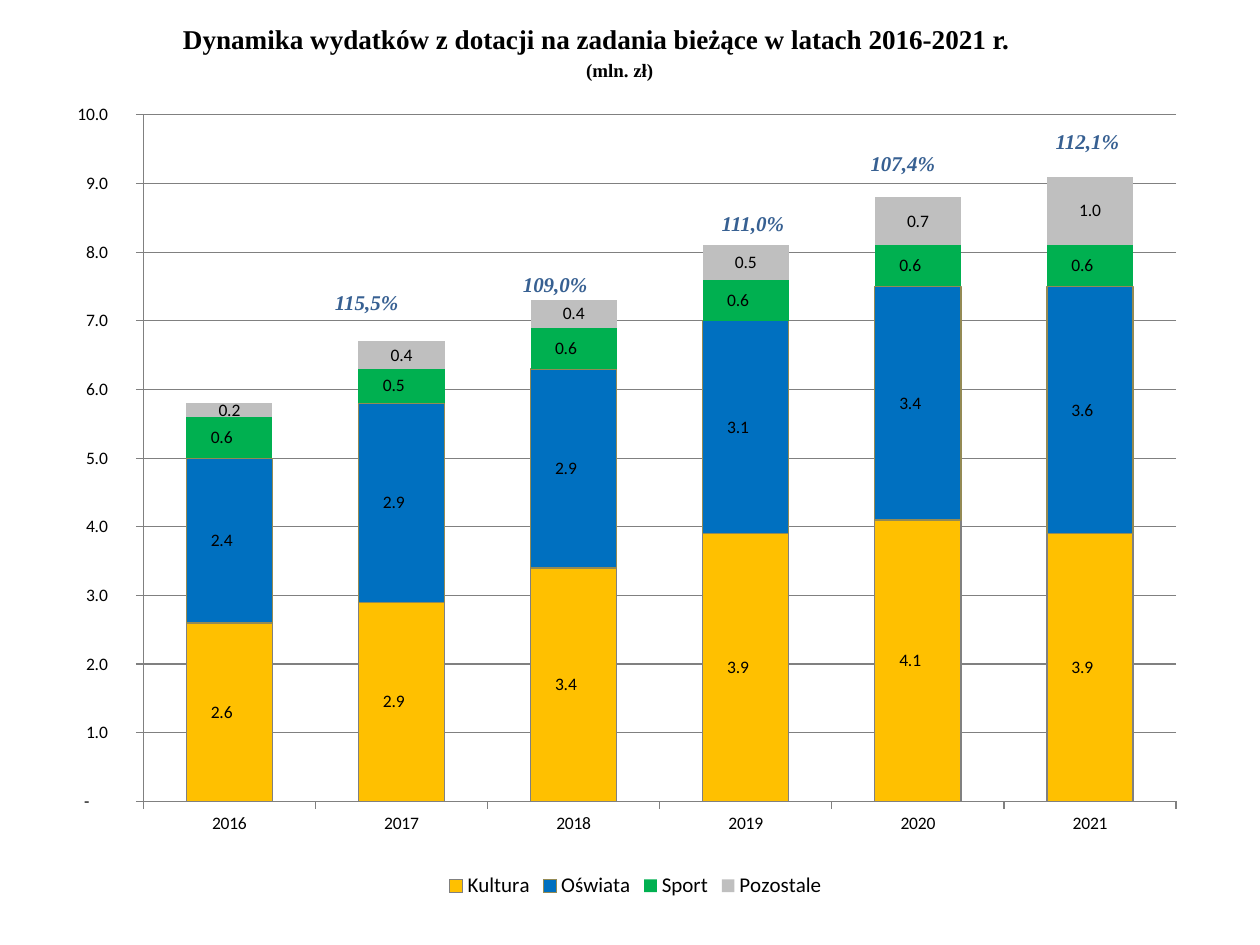
from pptx import Presentation
from pptx.chart.data import CategoryChartData
from pptx.dml.color import RGBColor
from pptx.enum.chart import XL_CHART_TYPE as ChartType, XL_LEGEND_POSITION as LegendPos
from pptx.enum.chart import XL_TICK_MARK as Tick
from pptx.enum.text import PP_ALIGN as Align
from pptx.oxml import parse_xml
from pptx.oxml.ns import nsdecls, qn
from pptx.util import Cm, Pt

BLACK = RGBColor(0x00, 0x00, 0x00)
GREY = RGBColor(0x80, 0x80, 0x80)
GOLD = RGBColor(0xFF, 0xC0, 0x00)
BLUE = RGBColor(0x00, 0x70, 0xC0)
GREEN = RGBColor(0x00, 0xB0, 0x50)
SILVER = RGBColor(0xBF, 0xBF, 0xBF)
KHAKI = RGBColor(0x94, 0x8A, 0x54)
NAVY = RGBColor(0x37, 0x60, 0x92)
SERIF, SANS = "Times New Roman", "Calibri"

ACCOUNTING = r'_-* #\ ##0.0\ _z_ł_-;\-* #\ ##0.0\ _z_ł_-;_-* "-"??\ _z_ł_-;_-@_-'
YEARS = ["2016", "2017", "2018", "2019", "2020", "2021"]
SERIES = [
    ("Kultura", (2.6, 2.9, 3.4, 3.9, 4.1, 3.9), GOLD, GREY, ACCOUNTING),
    ("Oświata", (2.4, 2.9, 2.9, 3.1, 3.4, 3.6), BLUE, KHAKI, ACCOUNTING),
    ("Sport", (0.6, 0.5, 0.6, 0.6, 0.6, 0.6), GREEN, None, ACCOUNTING),
    ("Pozostale", (0.2, 0.4, 0.4, 0.5, 0.7, 1.0), SILVER, None, "0.0"),
]
GROWTH = [
    ("115,5%", 5.79, 4.6),
    ("109,0%", 9.58, 4.22),
    ("111,0%", 13.59, 3.0),
    ("107,4%", 16.59, 1.8),
    ("112,1%", 20.32, 1.35),
]


def style_font(font, size, color=BLACK, name=SANS, bold=False, italic=False):
    """Set the look of a font."""
    font.size, font.name, font.bold, font.italic = Pt(size), name, bold, italic
    font.color.rgb = color


def add_title(s, x, y, w, h):
    """Add the heading and its unit line, the latter set a little to the right."""
    tf = s.shapes.add_textbox(Cm(x), Cm(y), Cm(w), Cm(h)).text_frame
    tf.word_wrap = True
    tf.text = "Dynamika wydatków z dotacji na zadania bieżące w latach 2016-2021 r.\n(mln. zł)"
    for p, size in zip(tf.paragraphs, (15.5, 10.8)):
        p.alignment = Align.CENTER
        style_font(p.runs[0].font, size, name=SERIF, bold=True)
    unit = tf.paragraphs[1]
    unit.space_before = Pt(2)
    unit._p.get_or_add_pPr().set("marL", str(Cm(0.96)))


def set_plot_layout(chart, x, y, w, h):
    """Fix the inner plot area as fractions of the chart."""
    plot_area = chart._chartSpace.chart.plotArea
    for old in plot_area.findall(qn("c:layout")):
        plot_area.remove(old)
    values = "".join(f'<c:{k} val="{v}"/>' for k, v in zip("xywh", (x, y, w, h)))
    plot_area.insert(0, parse_xml(
        f'<c:layout {nsdecls("c")}><c:manualLayout><c:layoutTarget val="inner"/>'
        f'<c:xMode val="edge"/><c:yMode val="edge"/>{values}</c:manualLayout></c:layout>'))


def style_axes(chart):
    """Format both axes and the gridlines."""
    for axis in (chart.category_axis, chart.value_axis):
        axis.major_tick_mark, axis.minor_tick_mark = Tick.OUTSIDE, Tick.NONE
        style_font(axis.tick_labels.font, 10)
        axis.format.line.color.rgb = GREY
        axis.format.line.width = Pt(0.75)
    axis = chart.value_axis
    axis.minimum_scale, axis.maximum_scale, axis.major_unit = 0, 10, 1
    axis.tick_labels.number_format = ACCOUNTING
    axis.tick_labels.number_format_is_linked = False
    axis.has_major_gridlines = True
    axis.major_gridlines.format.line.color.rgb = GREY
    axis.major_gridlines.format.line.width = Pt(0.75)


def style_series(ser, fill, line, number_format):
    """Colour a series and label its values."""
    ser.format.fill.solid()
    ser.format.fill.fore_color.rgb = fill
    if line is None:
        ser.format.line.fill.background()
    else:
        ser.format.line.color.rgb = line
        ser.format.line.width = Pt(0.75)
    labels = ser.data_labels
    labels.show_value = True
    labels.number_format = number_format
    labels.number_format_is_linked = False
    style_font(labels.font, 10)


def add_spending_chart(s, x, y, w, h):
    """Add the stacked columns with growth rates above them."""
    data = CategoryChartData(number_format="0.0")
    data.categories = YEARS
    for name, values, *_ in SERIES:
        data.add_series(name, values)
    chart = s.shapes.add_chart(
        ChartType.COLUMN_STACKED, Cm(x), Cm(y), Cm(w), Cm(h), data).chart
    chart.has_title = False
    style_font(chart.font, 18)
    set_plot_layout(chart, 0.09, 0.07, 0.86, 0.81)
    style_axes(chart)
    plot = chart.plots[0]
    plot.gap_width, plot.overlap, plot.vary_by_categories = 100, 100, False
    for ser, (_, _, fill, line, number_format) in zip(plot.series, SERIES):
        style_series(ser, fill, line, number_format)
    chart.has_legend = True
    chart.legend.position = LegendPos.BOTTOM
    chart.legend.include_in_layout = False
    style_font(chart.legend.font, 12)
    for text, dx, dy in GROWTH:
        tf = s.shapes.add_textbox(Cm(x + dx), Cm(y + dy), Cm(2), Cm(0.76)).text_frame
        tf.word_wrap = True
        tf.text = text
        style_font(tf.paragraphs[0].runs[0].font, 12, NAVY, SERIF, True, True)


def main():
    """Build and save the slide."""
    prs = Presentation()
    prs.slide_width, prs.slide_height = Cm(25.4), Cm(19.05)
    s = prs.slides.add_slide(prs.slide_layouts[6])
    add_title(s, 2.82, 0.33, 18.39, 1.35)
    add_spending_chart(s, 0.71, 1.12, 24.21, 17.09)
    prs.save("out.pptx")


if __name__ == "__main__":
    main()
